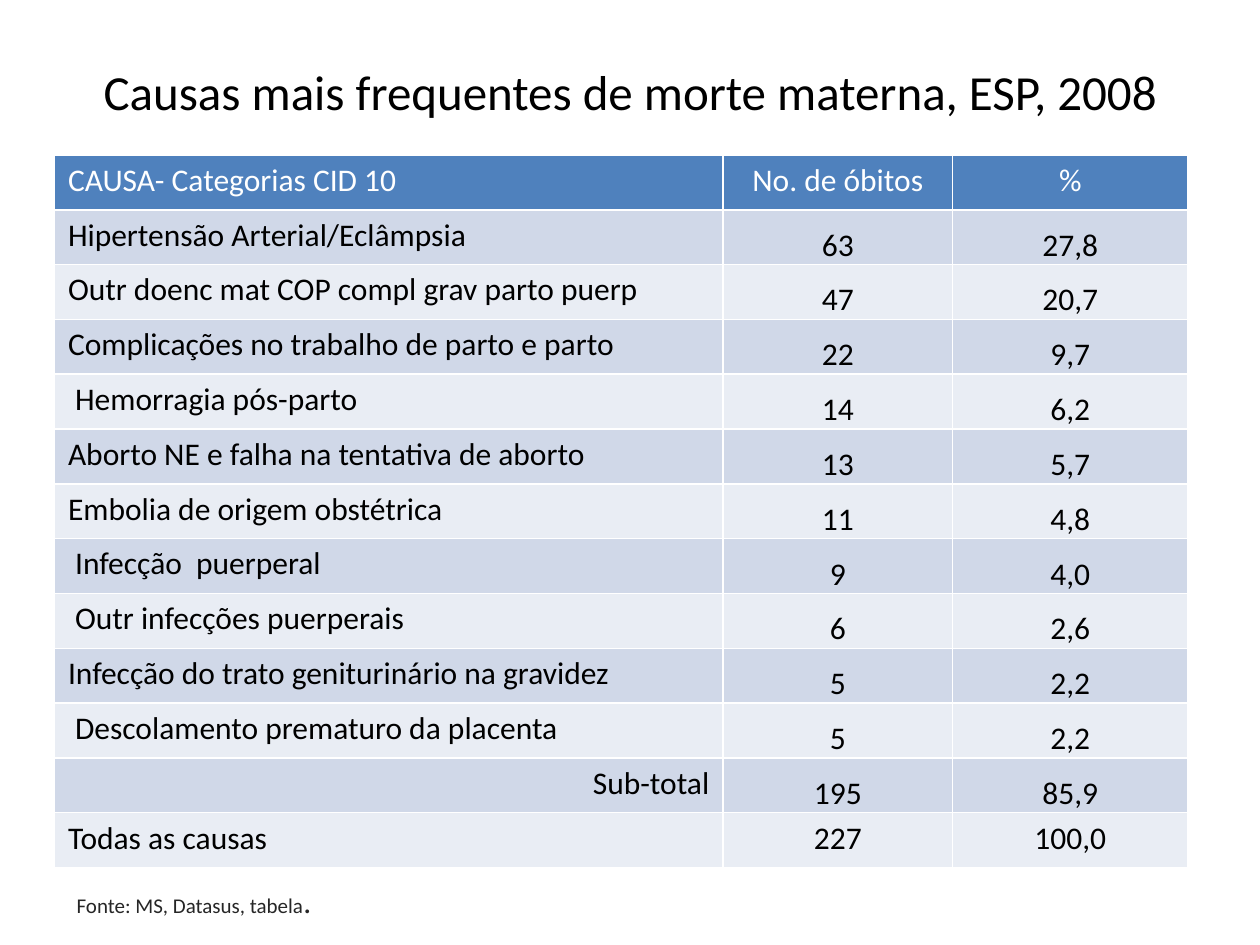
from pptx import Presentation
from pptx.dml.color import RGBColor
from pptx.enum import text
from pptx.util import Inches, Pt

FONT = "Calibri"
BLACK = RGBColor(0x00, 0x00, 0x00)
WHITE = RGBColor(0xFF, 0xFF, 0xFF)
DARK_GREY = RGBColor(0x26, 0x26, 0x26)
HEADER_BLUE = RGBColor(0x4F, 0x81, 0xBD)
BANDS = (RGBColor(0xE9, 0xED, 0xF4), RGBColor(0xD0, 0xD8, 0xE8))

LEFT, CENTER, RIGHT = (text.PP_ALIGN.LEFT, text.PP_ALIGN.CENTER,
                       text.PP_ALIGN.RIGHT)
TOP, MIDDLE, BOTTOM = (text.MSO_ANCHOR.TOP, text.MSO_ANCHOR.MIDDLE,
                       text.MSO_ANCHOR.BOTTOM)

COLUMN_WIDTHS = (5.31, 1.82, 1.87)
CAUSES = [
    ("CAUSA- Categorias CID 10", "No. de óbitos", "%"),
    ("Hipertensão Arterial/Eclâmpsia", "63", "27,8"),
    ("Outr doenc mat COP compl grav parto puerp", "47", "20,7"),
    ("Complicações no trabalho de parto e parto", "22", "9,7"),
    (" Hemorragia pós-parto", "14", "6,2"),
    ("Aborto NE e falha na tentativa de aborto", "13", "5,7"),
    ("Embolia de origem obstétrica", "11", "4,8"),
    (" Infecção  puerperal", "9", "4,0"),
    (" Outr infecções puerperais", "6", "2,6"),
    ("Infecção do trato geniturinário na gravidez", "5", "2,2"),
    (" Descolamento prematuro da placenta", "5", "2,2"),
    ("Sub-total", "195", "85,9"),
    ("Todas as causas", "227", "100,0"),
]


def write(frame, *parts, size=18, color=BLACK, align=LEFT):
    """Write parts as runs of one paragraph; a part is text or (text, size)."""
    paragraph = frame.paragraphs[0]
    paragraph.alignment = align
    for part in parts:
        words, points = part if isinstance(part, tuple) else (part, size)
        run = paragraph.add_run()
        run.text = words
        run.font.name = FONT
        run.font.size = Pt(points)
        run.font.bold = False
        run.font.color.rgb = color


def add_title(slide, left, top, width, height):
    title = slide.shapes.title
    title.left, title.top = Inches(left), Inches(top)
    title.width, title.height = Inches(width), Inches(height)
    title.text_frame.vertical_anchor = MIDDLE
    write(title.text_frame, "Causas mais frequentes de morte materna, ESP, 2008",
          size=28, align=CENTER)


def set_margins(cell, left, top, right, bottom):
    cell.margin_left, cell.margin_right = Inches(left), Inches(right)
    cell.margin_top, cell.margin_bottom = Inches(top), Inches(bottom)


def add_causes_table(slide, left, top, width, height):
    table = slide.shapes.add_table(
        len(CAUSES), len(COLUMN_WIDTHS),
        Inches(left), Inches(top), Inches(width), Inches(height)).table
    for column, column_width in zip(table.columns, COLUMN_WIDTHS):
        column.width = Inches(column_width)

    last = len(CAUSES) - 1
    for r, values in enumerate(CAUSES):
        table.rows[r].height = Inches(height / len(CAUSES))
        for c, value in enumerate(values):
            cell = table.cell(r, c)
            cell.fill.solid()
            cell.fill.fore_color.rgb = BANDS[r % 2] if r else HEADER_BLUE

            # Figures between header and total sit at the foot of the row
            if c and 0 < r < last:
                cell.vertical_anchor = BOTTOM
                set_margins(cell, 0.01, 0.01, 0.01, 0)
            else:
                cell.vertical_anchor = TOP
                set_margins(cell, 0.11, 0.05, 0.11, 0.05)

            align = CENTER if c else RIGHT if value == "Sub-total" else LEFT
            write(cell.text_frame, value, align=align,
                  color=BLACK if r else WHITE)


def add_data_source(slide, left, top, width, height):
    frame = slide.shapes.add_textbox(
        Inches(left), Inches(top), Inches(width), Inches(height)).text_frame
    frame.word_wrap = True
    write(frame, "Fonte: MS, Datasus, tabela", (".", 18),
          size=12, color=DARK_GREY)


def main():
    deck = Presentation()
    deck.slide_width, deck.slide_height = Inches(10), Inches(7.5)
    slide = deck.slides.add_slide(deck.slide_layouts.get_by_name("Title Only"))
    add_title(slide, 0.5, 0.3, 9, 0.85)
    add_causes_table(slide, 0.43, 1.23, 9, 5.66)
    add_data_source(slide, 0.51, 6.95, 6.29, 0.4)
    deck.save("out.pptx")


if __name__ == "__main__":
    main()
